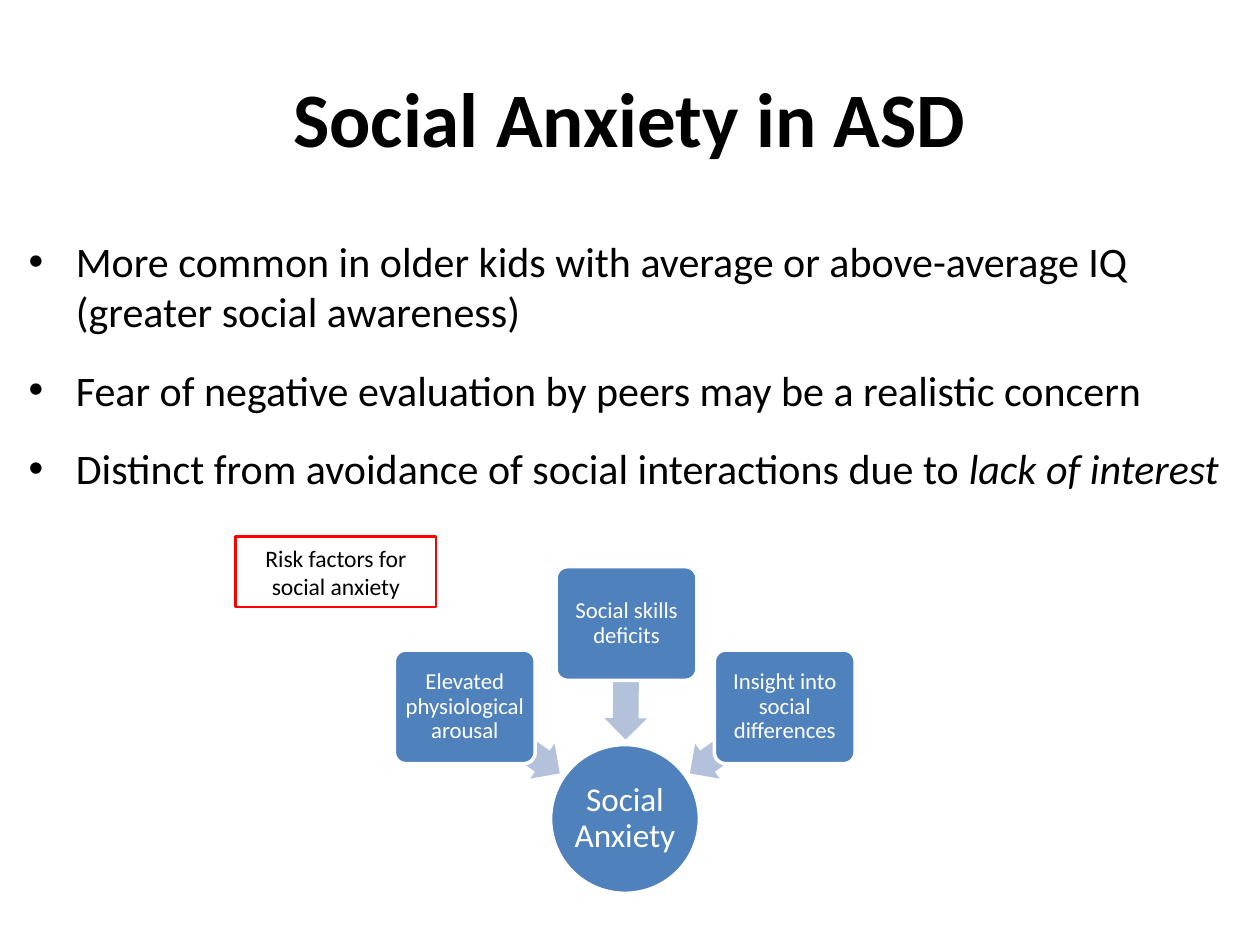
"""Build the slide on social anxiety in ASD with its risk factor diagram."""
import math

import pptx
import pptx.dml.color
import pptx.enum.shapes
import pptx.enum.text
import pptx.oxml
import pptx.oxml.ns
import pptx.util

Cm, Pt = pptx.util.Cm, pptx.util.Pt
RGB = pptx.dml.color.RGBColor
SHAPE = pptx.enum.shapes.MSO_SHAPE
ANCHOR = pptx.enum.text.MSO_ANCHOR
ALIGN = pptx.enum.text.PP_ALIGN

BLACK = RGB(0x00, 0x00, 0x00)
WHITE = RGB(0xFF, 0xFF, 0xFF)
BLUE = RGB(0x4F, 0x81, 0xBD)
PALE_BLUE = RGB(0xB3, 0xC1, 0xDB)
RED = RGB(0xFF, 0x00, 0x00)
FONT = "Calibri"

TITLE = "Social Anxiety in ASD"
BULLETS = [
    [("More common in older kids with average or above-average IQ (greater social awareness)", False)],
    [("Fear of negative evaluation\u00a0by peers may be a realistic concern", False)],
    [("Distinct from avoidance of social interactions due to ", False), ("lack of interest", True)],
]
CAPTION = "Risk factors for social anxiety"
HUB = ("Social Anxiety", 12.6, 16.51)
FACTORS = [
    ("Elevated physiological arousal", 9.37, 14.25),
    ("Social skills deficits", 12.63, 12.57),
    ("Insight into social differences", 15.82, 14.25),
]
HUB_SIZE = (3, 3)
FACTOR_SIZE = (2.84, 2.29)
ARROW_SIZE = (2.31, 0.86)
ARROW_SHARE = 0.7


def style(obj, **values):
    for name, value in values.items():
        setattr(obj, name, value)


def style_font(font, size, color, **values):
    style(font, name=FONT, size=Pt(size), **values)
    font.color.rgb = color


def set_bullet(p, indent):
    pPr = p._p.get_or_add_pPr()
    pPr.set("marL", str(indent))
    pPr.set("indent", str(-indent))
    ns = pptx.oxml.ns.nsdecls("a")
    for xml in (f'<a:buFont {ns} typeface="Arial"/>', f'<a:buChar {ns} char="•"/>'):
        pPr.append(pptx.oxml.parse_xml(xml))


def add_shape(s, kind, center, size, fill=None, line=None, weight=2):
    (x, y), (w, h) = center, size
    sp = s.shapes.add_shape(kind, Cm(x - w / 2), Cm(y - h / 2), Cm(w), Cm(h))
    sp.shadow.inherit = False
    for part, color in ((sp.fill, fill), (sp.line.fill, line)):
        if color is None:
            part.background()
        else:
            part.solid()
            part.fore_color.rgb = color
    if line is not None:
        sp.line.width = Pt(weight)
    return sp


def write(sp, text, size, color, spacing=1.0, inset=None):
    tf = sp.text_frame
    style(tf, word_wrap=True, vertical_anchor=ANCHOR.MIDDLE)
    if inset is not None:
        sides = ("margin_left", "margin_top", "margin_right", "margin_bottom")
        style(tf, **dict.fromkeys(sides, Cm(inset)))
    p = tf.paragraphs[0]
    style(p, text=text, alignment=ALIGN.CENTER, line_spacing=spacing)
    style_font(p.runs[0].font, size, color)


def add_bullets(s):
    sp = s.shapes.add_textbox(Cm(0.33), Cm(4.62), Cm(24.74), Cm(12.57))
    tf = sp.text_frame
    tf.word_wrap = True
    for i, parts in enumerate(BULLETS):
        p = tf.add_paragraph() if i else tf.paragraphs[0]
        set_bullet(p, Cm(0.95))
        p.space_before = Pt(16 if i else 0)
        for text, italic in parts:
            r = p.add_run()
            r.text = text
            style_font(r.font, 24, BLACK, italic=italic)


def add_diagram(s):
    text, hub_x, hub_y = HUB
    hub = add_shape(s, SHAPE.OVAL, (hub_x, hub_y), HUB_SIZE, BLUE, WHITE)
    write(hub, text, 19, WHITE, 0.9, 0.03)
    for text, x, y in FACTORS:
        dx, dy = x - hub_x, y - hub_y
        middle = (hub_x + ARROW_SHARE * dx, hub_y + ARROW_SHARE * dy)
        arrow = add_shape(s, SHAPE.LEFT_ARROW, middle, ARROW_SIZE, PALE_BLUE)
        arrow.rotation = math.degrees(math.atan2(dy, dx)) % 360
        arrow.adjustments[0] = 0.6
        box = add_shape(s, SHAPE.ROUNDED_RECTANGLE, (x, y), FACTOR_SIZE, BLUE, WHITE)
        box.adjustments[0] = 0.1
        write(box, text, 13, WHITE, 0.9, 0.08)


def main():
    prs = pptx.Presentation()
    style(prs, slide_width=Cm(25.4), slide_height=Cm(19.05))
    s = prs.slides.add_slide(prs.slide_layouts[5])
    title = s.shapes.title
    style(title, left=Cm(1.27), top=Cm(0.76), width=Cm(22.86), height=Cm(3.18))
    write(title, TITLE, 44, BLACK)
    title.text_frame.paragraphs[0].runs[0].font.bold = True
    add_bullets(s)
    add_diagram(s)
    caption = add_shape(s, SHAPE.RECTANGLE, (6.77, 11.53), (4.04, 1.42), line=RED, weight=1.5)
    write(caption, CAPTION, 13.5, BLACK)
    prs.save("out.pptx")


if __name__ == "__main__":
    main()
